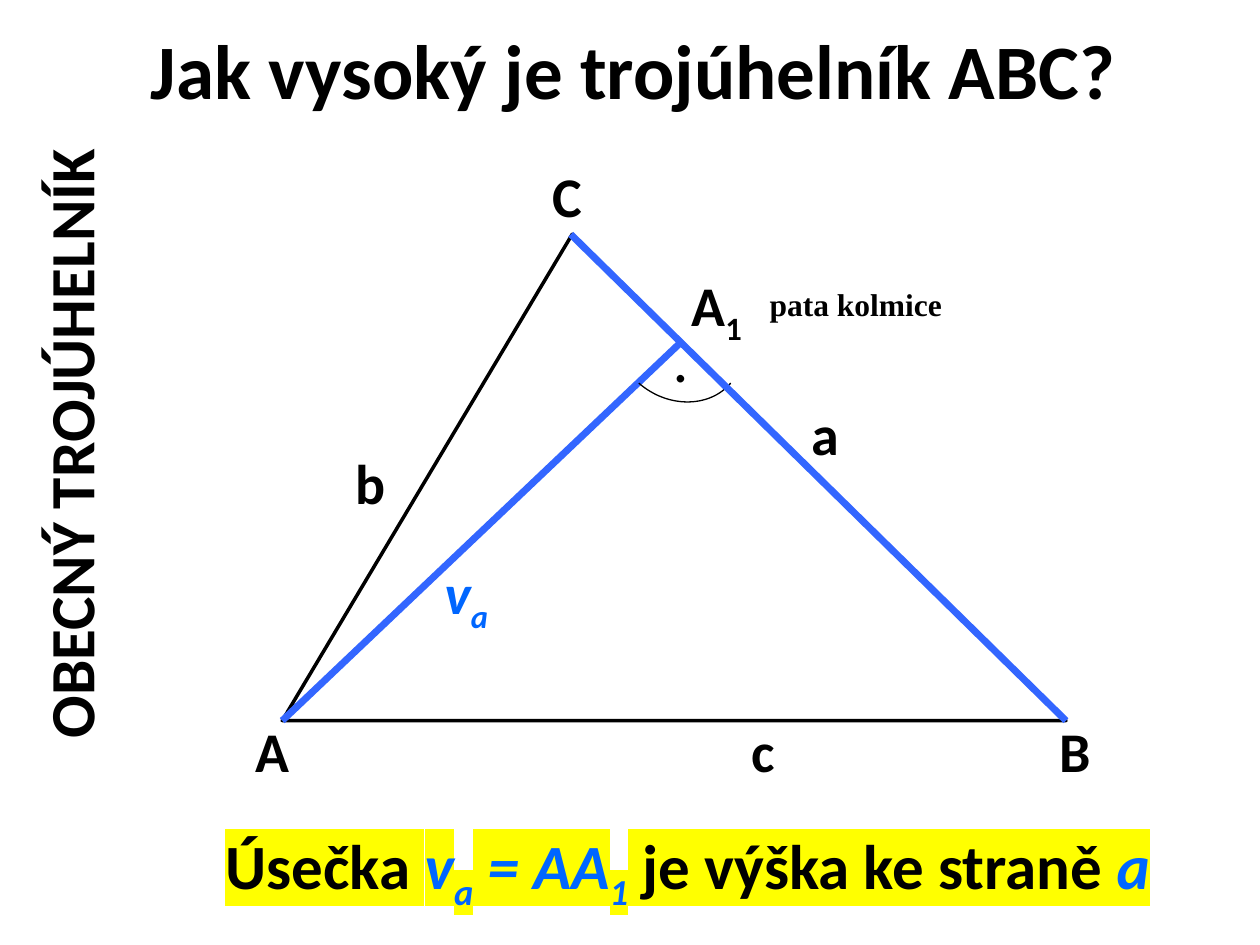
from dataclasses import dataclass

from lxml.etree import SubElement
from pptx import Presentation
from pptx.dml.color import RGBColor as RGB
from pptx.enum.shapes import MSO_CONNECTOR as CONN, MSO_SHAPE as SHAPE
from pptx.enum.text import MSO_AUTO_SIZE as AUTO
from pptx.oxml import parse_xml
from pptx.oxml.ns import nsdecls, qn
from pptx.util import Inches, Pt


@dataclass(frozen=True)
class Theme:
    """Colours, fonts and type sizes of the slide."""
    black: str = "000000"
    line: str = "3366FF"
    accent: str = "0066FF"
    marker: str = "FFFF00"
    font: str = "Calibri"
    serif: str = "Times New Roman"
    title: int = 44
    big: int = 36
    label: int = 32
    note: int = 18


T = Theme()


def add_run(p, text, size=T.label, font=T.font, color=T.black, bold=True,
            italic=False, sub=False, highlight=None):
    """Add one formatted run to a paragraph."""
    r = p.add_run()
    r.text = text
    f = r.font
    f.size, f.name, f.bold, f.italic = Pt(size), font, bold, italic
    f.color.rgb = RGB.from_string(color)
    rPr = r._r.get_or_add_rPr()
    if sub:
        rPr.set("baseline", "-25000")
    if highlight:
        mark = parse_xml(f'<a:highlight {nsdecls("a")}><a:srgbClr val="{highlight}"/></a:highlight>')
        rPr.find(qn("a:solidFill")).addnext(mark)


def add_text(slide, box, *runs, wrap=True, vert=None, **fmt):
    """Add a text box of (text, format) runs that share a base format."""
    s = slide.shapes.add_textbox(*map(Inches, box))
    tf = s.text_frame
    tf.word_wrap, tf.auto_size = wrap, AUTO.SHAPE_TO_FIT_TEXT
    if vert:
        tf._txBody.bodyPr.set("vert", vert)
    for text, own in runs:
        add_run(tf.paragraphs[0], text, **{**fmt, **own})


def add_line(slide, start, end):
    """Draw a thick blue segment between two points."""
    s = slide.shapes.add_connector(CONN.STRAIGHT, *map(Inches, (*start, *end)))
    s.line.color.rgb, s.line.width = RGB.from_string(T.line), Pt(4)
    SubElement(s._element.spPr, qn("a:effectLst"))


def style_outline(s, width):
    """Leave a shape with only a black outline."""
    s.shadow.inherit = False
    s.fill.background()
    s.line.color.rgb, s.line.width = RGB.from_string(T.black), Pt(width)


def add_angle_mark(slide, box, steps=32):
    """Draw the right-angle arc across the box, with its dot above."""
    x, y, w, h = box
    controls = ((x, y), (x + 0.31 * w, y + h), (x + 0.77 * w, y + h), (x + w, y))
    points = []
    for i in range(steps + 1):
        t = i / steps
        weights = ((1 - t) ** 3, 3 * t * (1 - t) ** 2, 3 * t * t * (1 - t), t ** 3)
        points.append(tuple(Inches(sum(k * c[axis] for k, c in zip(weights, controls)))
                            for axis in (0, 1)))
    fb = slide.shapes.build_freeform(*points[0])
    fb.add_line_segments(points[1:], close=False)
    style_outline(fb.convert_to_shape(), 0.75)
    add_text(slide, (x + 0.17, y - 0.55, 0.71, 0.7), (".", {}), size=T.big, bold=False)


def add_figure(slide, box):
    """Draw the triangle with its altitude, angle mark and labels."""
    x, y, w, h = box
    s = slide.shapes.add_shape(SHAPE.ISOSCELES_TRIANGLE, *map(Inches, box))
    s.adjustments[0] = 0.37
    style_outline(s, 2)
    labels = {"A": (-0.31, 3.78), "B": (6.07, 3.78), "C": (2.05, -0.63),
              "b": (0.48, 1.65), "c": (3.63, 3.78), "a": (4.1, 1.26)}
    for name, (dx, dy) in labels.items():
        add_text(slide, (x + dx, y + dy, 0.63, 0.63), (name, {}))
    foot = (x + 3.15, y + 0.87)
    add_line(slide, foot, (x, y + h))
    add_angle_mark(slide, (x + 2.83, y + 1.18, 0.73, 0.2))
    add_text(slide, (x + 1.19, y + 2.52, 0.61, 0.63), ("v", {}), ("a", {"sub": True}),
             color=T.accent, italic=True)
    add_text(slide, (x + 3.15, y + 0.24, 0.87, 0.63), ("A", {}), ("1", {"sub": True}))
    add_line(slide, (x + 2.29, y), (x + w, y + h))
    add_text(slide, (x + 3.77, y + 0.35, 1.65, 0.4), ("pata kolmice", {}),
             wrap=False, size=T.note, font=T.serif)


def add_conclusion(slide, box):
    """Write the highlighted statement about the altitude."""
    blue = {"color": T.accent, "italic": True}
    low = {**blue, "sub": True}
    add_text(slide, box, ("Úsečka ", {}), ("v", blue), ("a", low), (" = AA", blue),
             ("1", low), (" je výška ke straně ", {}), ("a", blue),
             size=T.big, highlight=T.marker)


def main():
    """Build and save the slide."""
    prs = Presentation()
    prs.slide_width, prs.slide_height = Inches(10), Inches(7.5)
    slide = prs.slides.add_slide(prs.slide_layouts[6])
    add_text(slide, (0.2, 0.68, 0.81, 5.28), ("OBECNÝ TROJÚHELNÍK", {}),
             vert="vert270", size=T.big)
    add_figure(slide, (2.24, 1.86, 6.22, 3.86))
    add_conclusion(slide, (1.69, 6.51, 9.09, 0.71))
    add_text(slide, (1.1, 0.13, 7.94, 0.84), ("Jak vysoký je trojúhelník ABC?", {}),
             wrap=False, size=T.title)
    prs.save("out.pptx")


if __name__ == "__main__":
    main()
